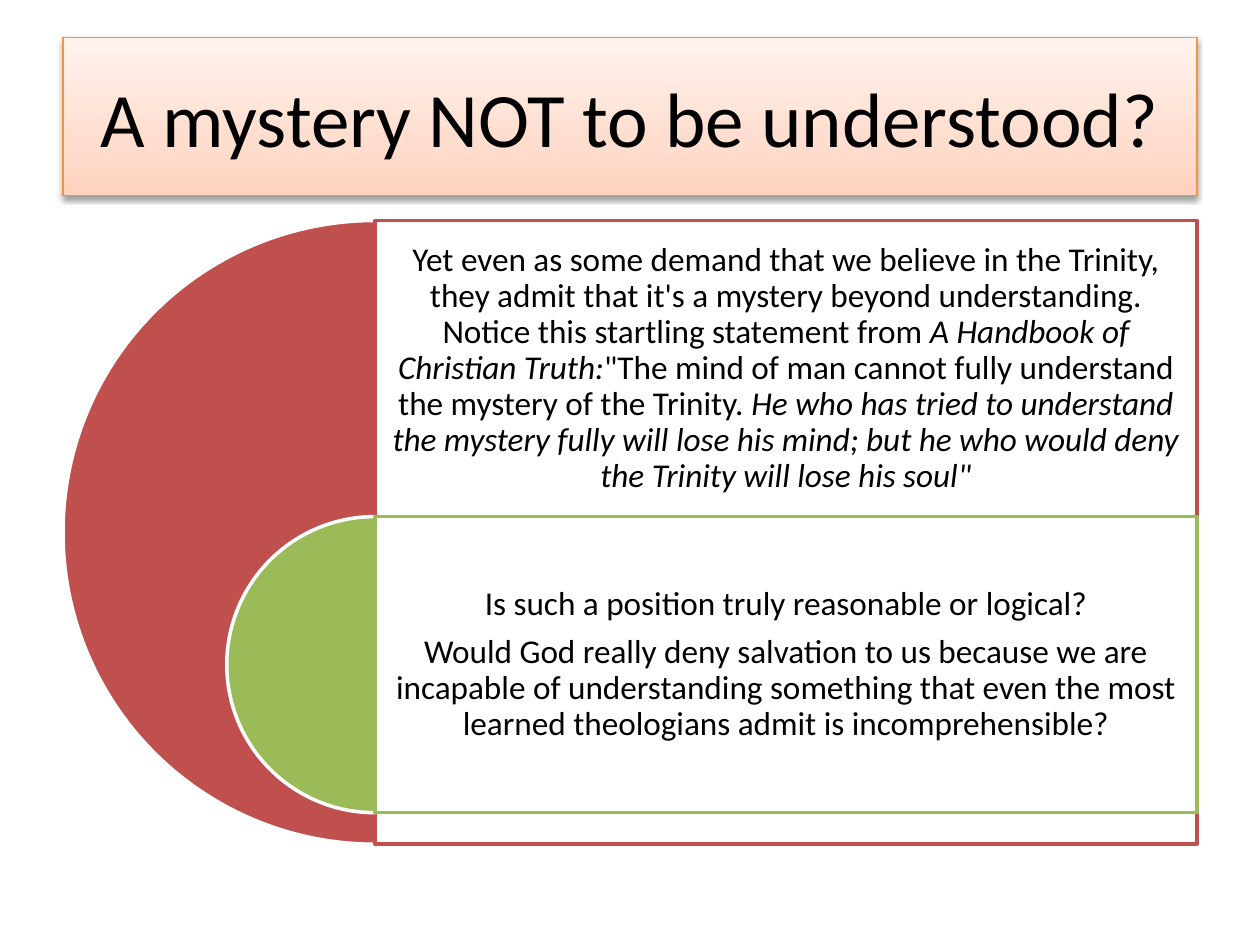
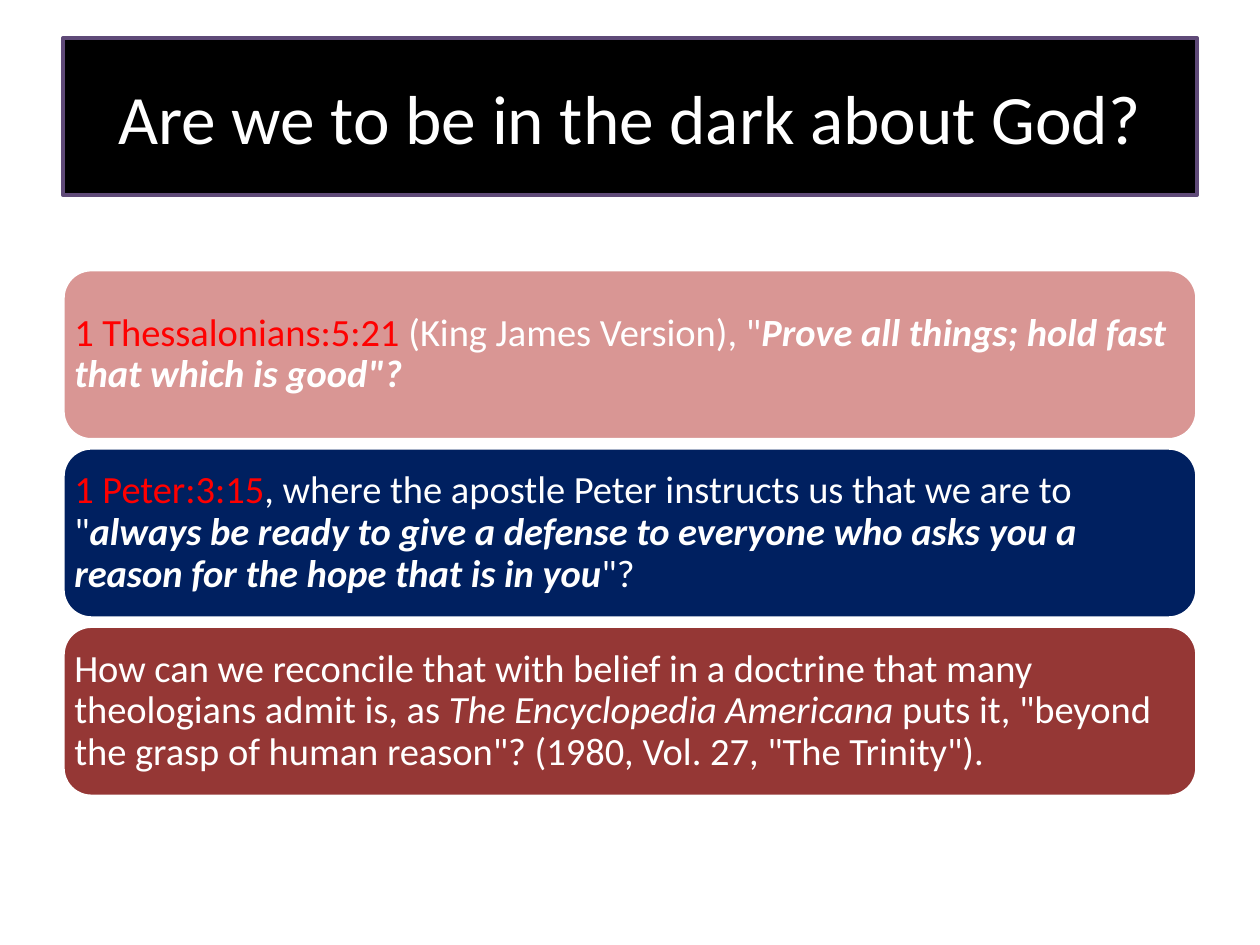
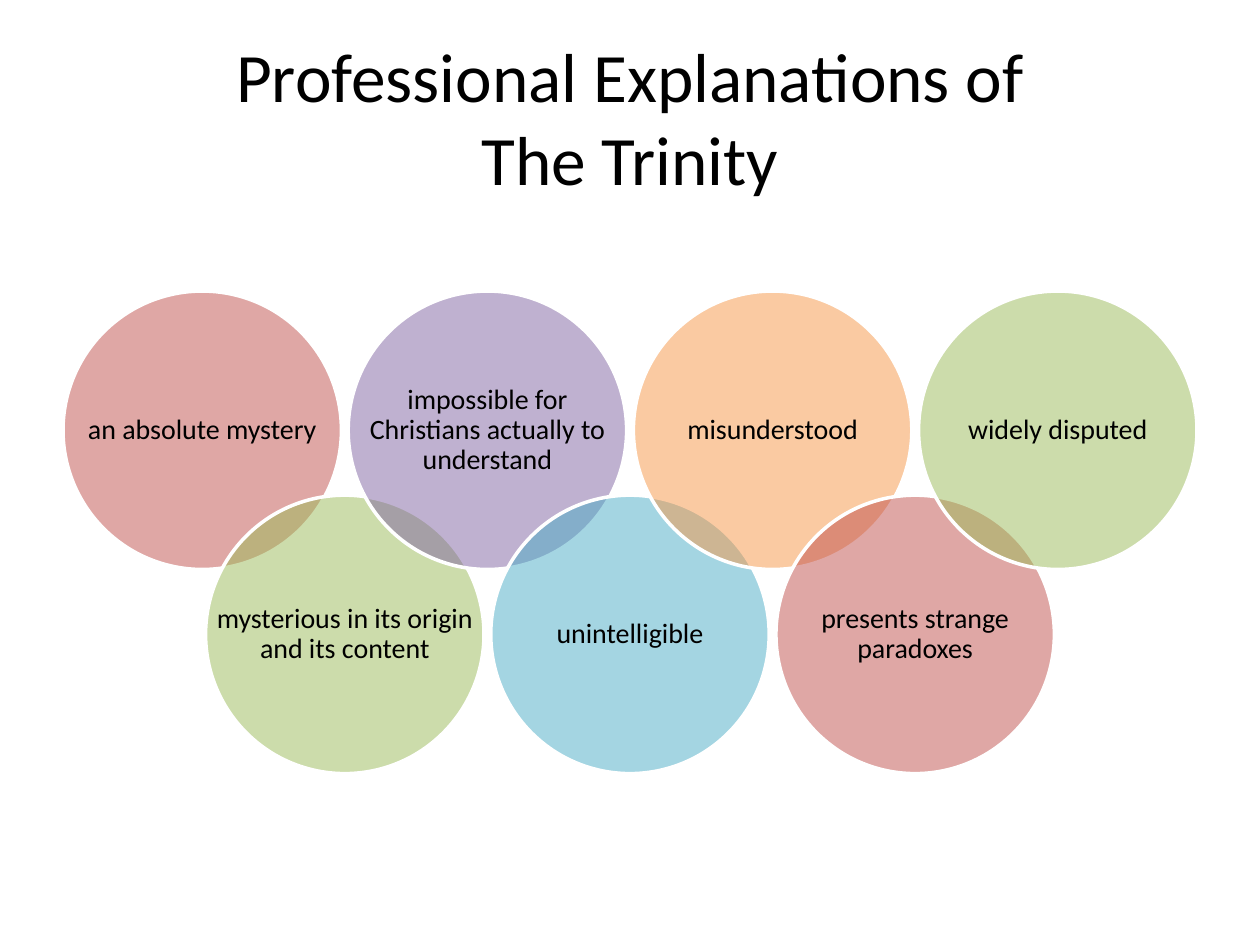
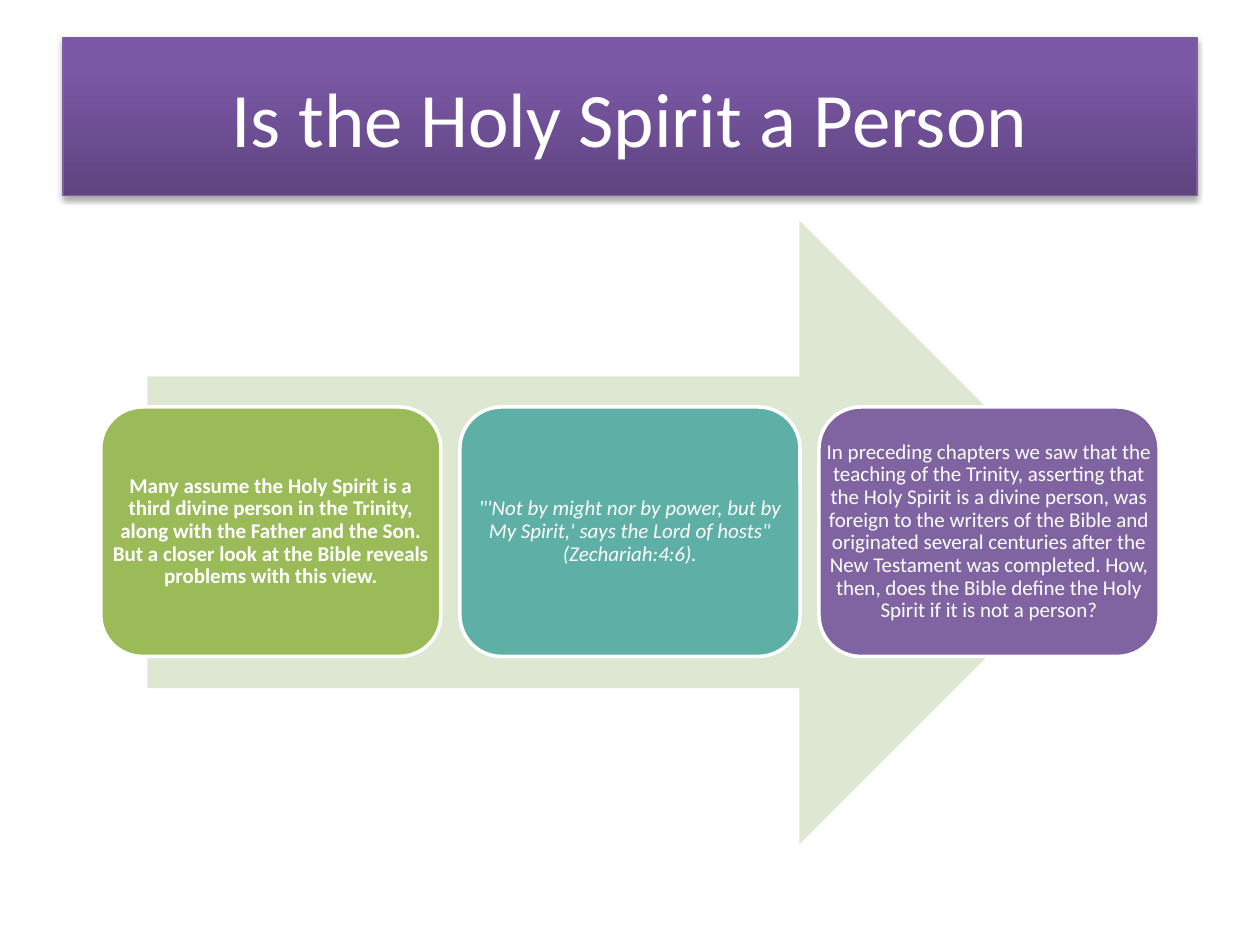
from lxml import etree
from pptx import Presentation
from pptx.dml.color import RGBColor
from pptx.enum.shapes import MSO_SHAPE
from pptx.enum.text import MSO_ANCHOR, PP_ALIGN
from pptx.oxml.ns import qn
from pptx.util import Inches, Pt

RECT, ROUND = MSO_SHAPE.RECTANGLE, MSO_SHAPE.ROUNDED_RECTANGLE
OVAL, PIE, ARROW = MSO_SHAPE.OVAL, MSO_SHAPE.PIE, MSO_SHAPE.RIGHT_ARROW
MIDDLE, LEFT, CENTER = MSO_ANCHOR.MIDDLE, PP_ALIGN.LEFT, PP_ALIGN.CENTER


class Theme:
    font = "Calibri"
    black, white, bright = "000000", "FFFFFF", "FF0000"
    red, green, purple = "C0504D", "9BBB59", "8064A2"
    aqua, orange, teal = "4BACC6", "F79646", "5EAFA6"
    pink, navy, maroon = "D99694", "002060", "953735"
    mist, plum, violet, amber = "DEE7D1", "5F4A78", "7D60A0", "F69240"
    peach = [(0, "FFD2BD"), (35, "FFDED0"), (100, "FFF2ED")]
    grape = [(0, "5F4480"), (80, "7B58A6"), (100, "7C57A8")]
    big, title, verse, quote, ring, step = 44, 39.6, 22, 19, 16, 12
    edge = 2


# Each paragraph is a list of runs: (text, marks), where the marks are
# b = bold, i = italic, r = bright red
MYSTERY = {
    "title": "A mystery NOT to be understood?",
    "parts": [
        (Theme.red, 4.95, [[
            ("Yet even as some demand that we believe in the Trinity, they admit that "
             "it's a mystery beyond understanding. Notice this startling statement from ", ""),
            ("A Handbook of Christian Truth:", "i"),
            ("\"The mind of man cannot fully understand the mystery of the Trinity. ", ""),
            ("He who has tried to understand the mystery fully will lose his mind; "
             "but he who would deny the Trinity will lose his soul\"", "i")]]),
        (Theme.green, 2.35, [
            [("Is such a position truly reasonable or logical?", "")],
            [("Would God really deny salvation to us because we are incapable of "
              "understanding something that even the most learned theologians admit "
              "is incomprehensible?", "")]]),
    ],
}
DARK = {
    "title": "Are we to be in the dark about God?",
    "verses": [
        (Theme.pink, [
            ("1 Thessalonians:5:21", "r"), (" (King James Version), \"", ""),
            ("Prove all things; hold fast that which is good\"?", "bi")]),
        (Theme.navy, [
            ("1 Peter:3:15", "r"),
            (", where the apostle Peter instructs us that we are to \"", ""),
            ("always be ready to give a defense to everyone who asks you a reason "
             "for the hope that is in you", "bi"), ("\"?", "")]),
        (Theme.maroon, [
            ("How can we reconcile that with belief in a doctrine that many theologians "
             "admit is, as ", ""),
            ("The Encyclopedia Americana ", "i"),
            ("puts it, \"beyond the grasp of human reason\"? (1980, Vol. 27, "
             "\"The Trinity\").", "")]),
    ],
}
VIEWS = {
    "title": "Professional Explanations of\nThe Trinity",
    "rings": [
        (Theme.red, "an absolute mystery"),
        (Theme.green, "mysterious in its origin and its content"),
        (Theme.purple, "impossible for Christians actually to understand"),
        (Theme.aqua, "unintelligible"),
        (Theme.orange, "misunderstood"),
        (Theme.red, "presents strange paradoxes"),
        (Theme.green, "widely disputed"),
    ],
}
SPIRIT = {
    "title": "Is the Holy Spirit a Person",
    "steps": [
        (Theme.green, "b",
         "Many assume the Holy Spirit is a third divine person in the Trinity, along with "
         "the Father and the Son. But a closer look at the Bible reveals problems with "
         "this view."),
        (Theme.teal, "i",
         "\"'Not by might nor by power, but by My Spirit,' says the Lord of hosts\" "
         "(Zechariah:4:6)."),
        (Theme.purple, "",
         "In preceding chapters we saw that the teaching of the Trinity, asserting that "
         "the Holy Spirit is a divine person, was foreign to the writers of the Bible and "
         "originated several centuries after the New Testament was completed. How, then, "
         "does the Bible define the Holy Spirit if it is not a person?"),
    ],
}

SIDE, WIDE, TOP = 0.5, 9, 1.75


def rgb(code):
    return RGBColor.from_string(code)


def place(box):
    return [Inches(n) for n in box]


def blend(shape, stops):
    """Fill a shape with a gradient that runs from bottom to top."""
    shape.fill.gradient()
    shape.fill.gradient_angle = 90
    group = shape._element.spPr.find(qn("a:gradFill")).find(qn("a:gsLst"))
    for old in list(group):
        group.remove(old)
    for pos, code in stops:
        stop = etree.SubElement(group, qn("a:gs"), pos=str(pos * 1000))
        etree.SubElement(stop, qn("a:srgbClr"), val=code)


def shade(shape, alpha, drop):
    """Cast a soft shadow straight down, drop points long."""
    cast = etree.SubElement(
        shape._element.spPr.find(qn("a:effectLst")), qn("a:outerShdw"),
        blurRad=str(Pt(3.1)), dist=str(Pt(drop)), dir="5400000", rotWithShape="0")
    tint = etree.SubElement(cast, qn("a:srgbClr"), val=Theme.black)
    etree.SubElement(tint, qn("a:alpha"), val=str(alpha * 1000))


def draw(slide, kind, box, fill=None, line=None, width=Theme.edge, alpha=100):
    shape = slide.shapes.add_shape(kind, *place(box))
    shape.shadow.inherit = False
    if isinstance(fill, list):
        blend(shape, fill)
    elif fill:
        shape.fill.solid()
        shape.fill.fore_color.rgb = rgb(fill)
        if alpha < 100:
            tint = shape._element.spPr.find(qn("a:solidFill"))[0]
            etree.SubElement(tint, qn("a:alpha"), val=str(alpha * 1000))
    else:
        shape.fill.background()
    if line:
        shape.line.color.rgb = rgb(line)
        shape.line.width = Pt(width)
    else:
        shape.line.fill.background()
    return shape


def style(para, size, color, align):
    para.alignment = align
    para.font.name, para.font.size = Theme.font, Pt(size)
    para.font.color.rgb = rgb(color)


def label(slide, box, paras, size, color, inset, align=CENTER):
    frame = slide.shapes.add_textbox(*place(box)).text_frame
    frame.word_wrap, frame.vertical_anchor = True, MIDDLE
    frame.margin_left = frame.margin_right = Inches(inset)
    frame.margin_top = frame.margin_bottom = Inches(inset)
    for i, runs in enumerate(paras):
        para = frame.add_paragraph() if i else frame.paragraphs[0]
        style(para, size, color, align)
        para.line_spacing, para.space_after = 0.9, Pt(0.35 * size)
        for words, marks in runs:
            run = para.add_run()
            run.text = words
            if "b" in marks:
                run.font.bold = True
            if "i" in marks:
                run.font.italic = True
            if "r" in marks:
                run.font.color.rgb = rgb(Theme.bright)


def start(deck, title, size, color, fill=None, line=None, width=Theme.edge):
    """Add a blank slide with its title band; return both."""
    slide = deck.slides.add_slide(deck.slide_layouts[6])
    band = draw(slide, RECT, (SIDE, 0.3, WIDE, 1.25), fill, line, width)
    frame = band.text_frame
    frame.word_wrap, frame.vertical_anchor = True, MIDDLE
    para = frame.paragraphs[0]
    para.text = title
    style(para, size, color, CENTER)
    return slide, band


def mystery(deck):
    slide, band = start(deck, MYSTERY["title"], Theme.big, Theme.black,
                        Theme.peach, Theme.amber, 0.75)
    shade(band, 38, 1.6)
    row = 2.35
    left = SIDE + 4.95 / 2
    width = SIDE + WIDE - left
    for i, (color, size, paras) in enumerate(MYSTERY["parts"]):
        top = TOP + i * row
        half = draw(slide, PIE, (left - size / 2, top, size, size), color, Theme.white)
        half.adjustments[0], half.adjustments[1] = 54, 162
        draw(slide, RECT, (left, top, width, size), Theme.white, color, alpha=90)
        label(slide, (left, top, width, row), paras, Theme.quote, Theme.black, 0.08)


def dark(deck):
    slide, _ = start(deck, DARK["title"], Theme.title, Theme.white,
                     Theme.black, Theme.plum)
    high, gap = 1.35, 0.065
    for i, (color, runs) in enumerate(DARK["verses"]):
        box = (SIDE, 2.14 + i * (high + gap), WIDE, high)
        draw(slide, ROUND, box, color, Theme.white)
        label(slide, box, [runs], Theme.verse, Theme.white, 0.09, LEFT)


def views(deck):
    slide, _ = start(deck, VIEWS["title"], Theme.title, Theme.black)
    rings, size = VIEWS["rings"], 2.21
    pitch = (WIDE - size) / (len(rings) - 1)
    for i, (color, words) in enumerate(rings):
        box = (SIDE + i * pitch, 2.31 + i % 2 * 1.62, size, size)
        draw(slide, OVAL, box, color, Theme.white, alpha=50)
        label(slide, box, [[(words, "")]], Theme.ring, Theme.black, 0.07)


def spirit(deck):
    slide, band = start(deck, SPIRIT["title"], Theme.big, Theme.white,
                        Theme.grape, Theme.violet, 0.75)
    shade(band, 35, 1.8)
    draw(slide, ARROW, (1.17, TOP, 7.65, 4.95), Theme.mist)
    width, gap = 2.7, 0.15
    for i, (color, marks, words) in enumerate(SPIRIT["steps"]):
        box = (0.8 + i * (width + gap), 3.23, width, 1.98)
        draw(slide, ROUND, box, color, Theme.white)
        label(slide, box, [[(words, marks)]], Theme.step, Theme.white, 0.05)


def main():
    deck = Presentation()
    deck.slide_width, deck.slide_height = Inches(10), Inches(7.5)
    for build in (mystery, dark, views, spirit):
        build(deck)
    deck.save("out.pptx")


if __name__ == "__main__":
    main()
